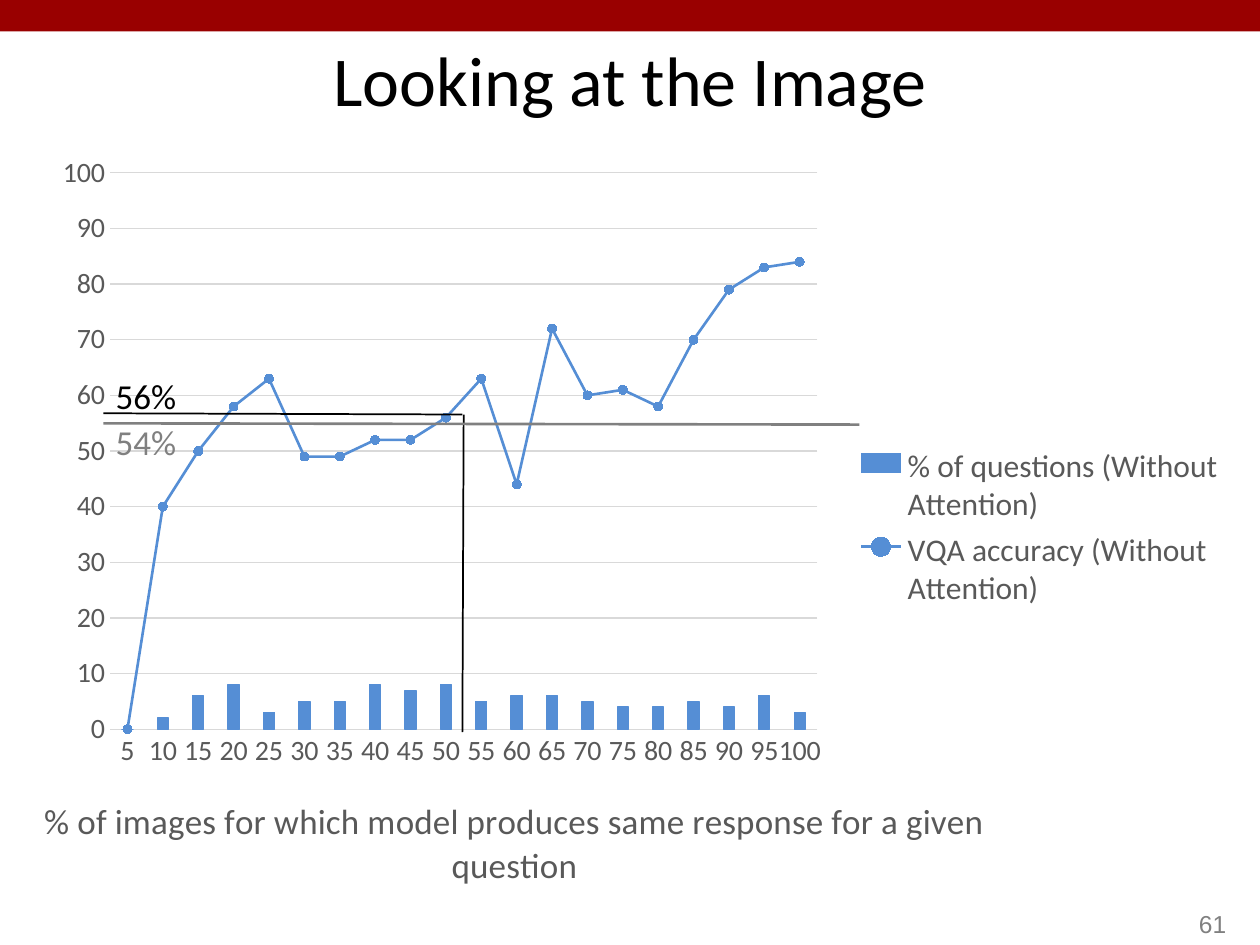
from copy import deepcopy

from lxml.etree import SubElement
from pptx import Presentation
from pptx.chart.data import CategoryChartData
from pptx.dml.color import RGBColor
from pptx.enum.chart import XL_CHART_TYPE as ChartType, XL_LEGEND_POSITION as LegendPosition
from pptx.enum.chart import XL_MARKER_STYLE as MarkerStyle, XL_TICK_MARK as TickMark
from pptx.enum.shapes import MSO_CONNECTOR as Connector, MSO_SHAPE as Shape
from pptx.enum.text import MSO_ANCHOR as Anchor, PP_ALIGN as Align
from pptx.oxml.ns import qn
from pptx.util import Inches, Pt

BLUE, GRAY, LABEL, GRID = "558ED5", "808080", "595959", "D9D9D9"
QUESTION_SHARES = [0, 2, 6, 8, 3, 5, 5, 8, 7, 8, 5, 6, 6, 5, 4, 4, 5, 4, 6, 3]
ACCURACIES = [0, 40, 50, 58, 63, 49, 49, 52, 52, 56, 63, 44, 72, 60, 61, 58, 70, 79, 83, 84]


def rgb(value):
    return RGBColor.from_string(value)


def style_font(font, size, color, name="Calibri"):
    font.size, font.name, font.bold = Pt(size), name, False
    font.color.rgb = rgb(color)


def style_line(line, color, width):
    line.color.rgb = rgb(color)
    line.width = Pt(width)


def fill_solid(fill, color):
    fill.solid()
    fill.fore_color.rgb = rgb(color)


def write_text(frame, text, size=20, color="000000", font="Calibri", align=None, anchor=None):
    paragraph = frame.paragraphs[0]
    run = paragraph.add_run()
    run.text = text
    style_font(run.font, size, color, font)
    if align is not None:
        paragraph.alignment = align
    if anchor is not None:
        frame.vertical_anchor = anchor


def add_label(slide, text, left, top, width, height, **text_format):
    label = slide.shapes.add_textbox(*map(Inches, (left, top, width, height)))
    label.text_frame.word_wrap = True
    write_text(label.text_frame, text, **text_format)


def add_rule(slide, start, end, color="000000", width=1):
    rule = slide.shapes.add_connector(Connector.STRAIGHT, *map(Inches, start + end))
    style_line(rule.line, color, width)
    SubElement(rule._element.spPr, qn("a:effectLst"))


def add_banner(slide):
    banner = slide.shapes.add_shape(Shape.RECTANGLE, 0, 0, Inches(10), Inches(0.25))
    banner.shadow.inherit = False
    fill_solid(banner.fill, "990000")
    banner.line.fill.background()


def add_title(slide, text):
    title = slide.shapes.title
    title.left, title.top, title.width, title.height = map(Inches, (0.75, 0.25, 8.5, 0.75))
    write_text(title.text_frame, text, size=40, align=Align.CENTER, anchor=Anchor.MIDDLE)


def set_layout(parent, x, y, w=None, h=None, inner=False):
    for old in parent.findall(qn("c:layout")):
        parent.remove(old)
    layout = SubElement(parent, qn("c:layout"))
    overlay = parent.find(qn("c:overlay"))
    if overlay is None:
        parent.insert(0, layout)
    else:
        overlay.addprevious(layout)
    manual = SubElement(layout, qn("c:manualLayout"))
    settings = {"layoutTarget": "inner" if inner else None, "xMode": "edge", "yMode": "edge",
                "x": x, "y": y, "w": w, "h": h}
    for tag, value in settings.items():
        if value is not None:
            SubElement(manual, qn(f"c:{tag}")).set("val", str(value))


def move_last_series_to_line(chart):
    bars = chart.element.find(f".//{qn('c:barChart')}")
    accuracy = bars.findall(qn("c:ser"))[-1]
    for bar_setting in accuracy.findall(qn("c:invertIfNegative")):
        accuracy.remove(bar_setting)
    lines = bars.makeelement(qn("c:lineChart"), {})
    bars.addnext(lines)
    SubElement(lines, qn("c:grouping")).set("val", "standard")
    SubElement(lines, qn("c:varyColors")).set("val", "0")
    lines.append(accuracy)
    SubElement(lines, qn("c:marker")).set("val", "1")
    for axis_id in bars.findall(qn("c:axId")):
        lines.append(deepcopy(axis_id))


def style_series(chart):
    bar_plot, line_plot = chart.plots
    bar_plot.gap_width = 219
    bar_plot.vary_by_categories = False
    shares, accuracy = bar_plot.series[0], line_plot.series[0]
    fill_solid(shares.format.fill, BLUE)
    style_line(shares.format.line, BLUE, 0.75)
    style_line(accuracy.format.line, BLUE, 1.5)
    accuracy.smooth = False
    accuracy.marker.style = MarkerStyle.CIRCLE
    accuracy.marker.size = 5
    fill_solid(accuracy.marker.format.fill, BLUE)
    style_line(accuracy.marker.format.line, BLUE, 0.75)


def style_axes(chart):
    responses, percent = chart.category_axis, chart.value_axis
    for axis in (responses, percent):
        axis.major_tick_mark = axis.minor_tick_mark = TickMark.NONE
        style_font(axis.tick_labels.font, 16, LABEL)
    style_line(responses.format.line, GRID, 0.75)
    percent.format.line.fill.background()
    percent.minimum_scale, percent.maximum_scale, percent.major_unit = 0, 100, 10
    style_line(percent.major_gridlines.format.line, GRID, 0.75)
    heading = responses.axis_title
    write_text(heading.text_frame,
               "% of images for which model produces same response for a given question",
               color=LABEL)
    set_layout(heading._element, 0, 0.85)


def add_accuracy_chart(slide):
    data = CategoryChartData()
    data.categories = [str(share) for share in range(5, 101, 5)]
    data.add_series("% of questions (Without Attention)", QUESTION_SHARES)
    data.add_series("VQA accuracy (Without Attention)", ACCURACIES)
    chart = slide.shapes.add_chart(
        ChartType.COLUMN_CLUSTERED, *map(Inches, (0.3, 1.13, 9.52, 6.05)), data).chart
    chart.has_title = False
    style_font(chart.font, 10, "000000")
    move_last_series_to_line(chart)
    style_series(chart)
    style_axes(chart)
    chart.has_legend = True
    chart.legend.position = LegendPosition.RIGHT
    chart.legend.include_in_layout = False
    style_font(chart.legend.font, 18, LABEL)
    set_layout(chart.legend._element, 0.68, 0.39, 0.31, 0.23)
    set_layout(chart.element.find(f".//{qn('c:plotArea')}"), 0.06, 0.04, 0.59, 0.73, inner=True)


def main():
    deck = Presentation()
    deck.slide_width, deck.slide_height = Inches(10), Inches(7.5)
    slide = deck.slides.add_slide(deck.slide_layouts[5])
    add_banner(slide)
    add_title(slide, "Looking at the Image")
    add_accuracy_chart(slide)
    add_rule(slide, (3.67, 5.81), (3.68, 3.29))
    add_rule(slide, (0.82, 3.28), (3.67, 3.29))
    add_label(slide, "56%", 0.82, 2.92, 0.69, 0.44)
    add_rule(slide, (0.82, 3.36), (6.82, 3.37), color=GRAY, width=1.5)
    add_label(slide, "54%", 0.82, 3.29, 0.69, 0.44, color=GRAY)
    add_label(slide, "61", 7.75, 7, 2.08, 0.5, size=14, color=GRAY, font="Arial",
              align=Align.RIGHT, anchor=Anchor.BOTTOM)
    deck.save("out.pptx")


if __name__ == "__main__":
    main()
